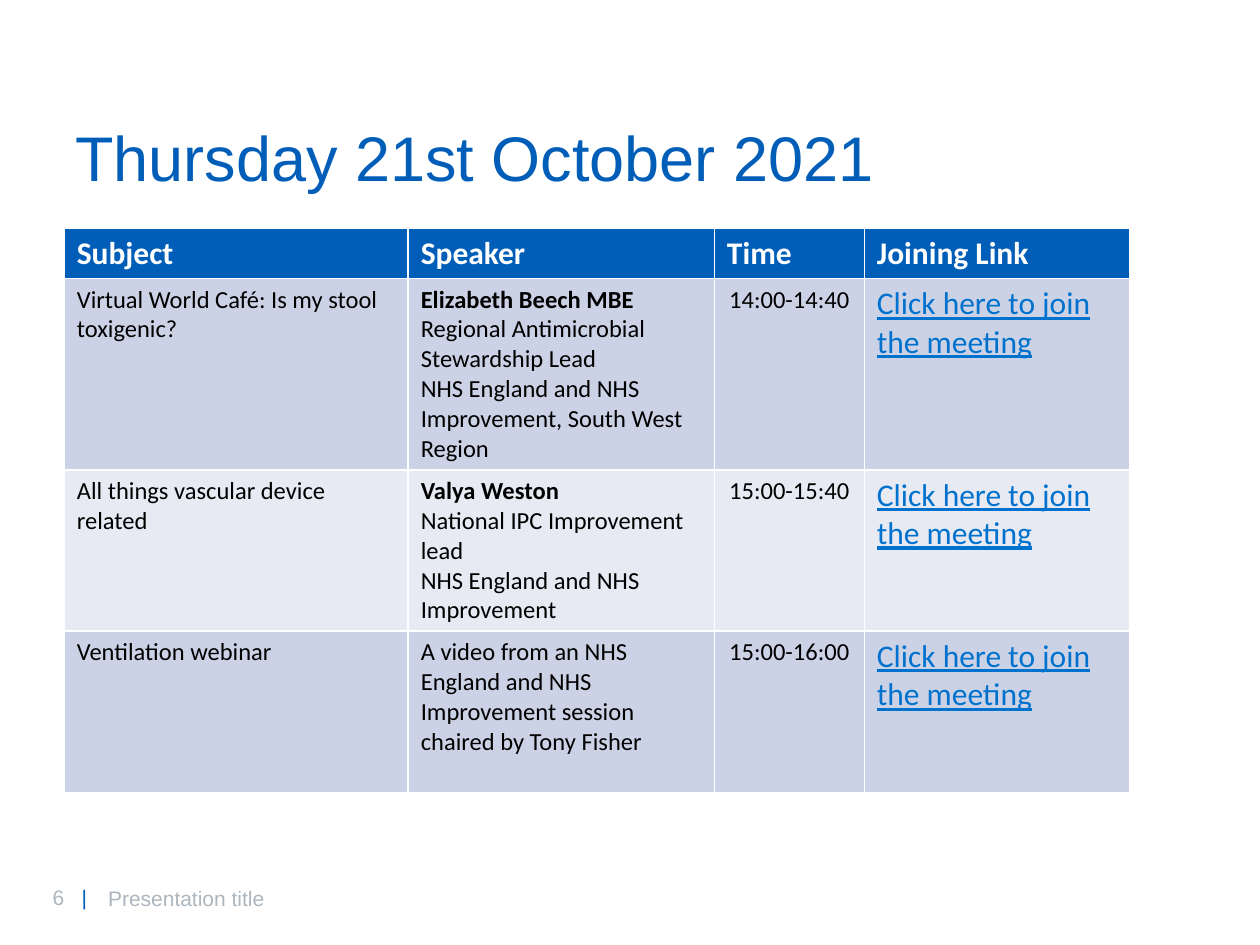
import pptx
import pptx.dml.color
import pptx.enum.text
import pptx.util
import lxml.etree

COLORS = {"blue": "005EB8", "link": "0072CE", "grey": "ADB6BE", "black": "000000",
          "white": "FFFFFF", "dark_band": "CCD2E6", "light_band": "E7EAF3"}
ANCHOR = pptx.enum.text.MSO_ANCHOR

deck = pptx.Presentation()
deck.slide_width = pptx.util.Inches(10)
deck.slide_height = pptx.util.Inches(7.5)
page = deck.slides.add_slide(deck.slide_layouts[6])


def add_span(para, text, size, color, font="Calibri", bold=False, underline=False):
    span = para.add_run()
    span.text = text
    span.font.name = font
    span.font.size = pptx.util.Pt(size)
    span.font.bold = bold
    span.font.underline = underline
    span.font.color.rgb = pptx.dml.color.RGBColor.from_string(COLORS[color])


def add_box(left, top, width, height, anchor):
    box = page.shapes.add_textbox(*(pptx.util.Inches(n) for n in (left, top, width, height)))
    box.text_frame.word_wrap = True
    box.text_frame.vertical_anchor = anchor
    return box.text_frame.paragraphs[0]


number = add_box(0.32, 6.97, 0.71, 0.3, ANCHOR.TOP)
properties = number._p.get_or_add_pPr()
tabs = lxml.etree.SubElement(properties, pptx.oxml.ns.qn("a:tabLst"))
lxml.etree.SubElement(tabs, pptx.oxml.ns.qn("a:tab"),
                      pos=str(pptx.util.Inches(0.23)), algn="l")
add_span(number, "6\t", 12, "grey", "Arial")
add_span(number, "|", 12, "blue", "Arial")

title = add_box(0.5, 0.93, 7.18, 0.67, ANCHOR.BOTTOM)
title.line_spacing = 0.9
add_span(title, "Thursday 21st October 2021", 36, "blue", "Arial")

footer = add_box(0.76, 6.93, 6.26, 0.4, ANCHOR.MIDDLE)
add_span(footer, "Presentation title", 12, "grey", "Arial")

headings = ["Subject", "Speaker", "Time", "Joining Link"]
sessions = [
    ("Virtual World Café: Is my stool toxigenic?", "Elizabeth Beech MBE",
     ["Regional Antimicrobial Stewardship Lead",
      "NHS England and NHS Improvement, South West Region"], "14:00-14:40"),
    ("All things vascular device related", "Valya Weston",
     ["National IPC Improvement lead", "NHS England and NHS Improvement"], "15:00-15:40"),
    ("Ventilation webinar", None,
     ["A video from an NHS England and NHS Improvement session chaired by Tony Fisher"],
     "15:00-16:00"),
]
columns = [2.73, 2.43, 1.19, 2.11]
rows = [0.4, 1.52, 1.28, 1.28]
frame = page.shapes.add_table(len(rows), len(columns), pptx.util.Inches(0.51),
                              pptx.util.Inches(1.81), pptx.util.Inches(sum(columns)),
                              pptx.util.Inches(sum(rows)))
table = frame.table
for column, width in zip(table.columns, columns):
    column.width = pptx.util.Inches(width)
for row, height in zip(table.rows, rows):
    row.height = pptx.util.Inches(height)

for index, row in enumerate(table.rows):
    band = "blue" if index == 0 else "dark_band" if index % 2 else "light_band"
    for cell in row.cells:
        cell.fill.solid()
        cell.fill.fore_color.rgb = pptx.dml.color.RGBColor.from_string(COLORS[band])

for column, heading in enumerate(headings):
    add_span(table.cell(0, column).text_frame.paragraphs[0], heading, 18, "white", bold=True)

for row, (subject, speaker, details, time) in enumerate(sessions, start=1):
    subject_para, speaker_para, time_para, link_para = (
        table.cell(row, column).text_frame.paragraphs[0] for column in range(len(columns)))
    add_span(subject_para, subject, 14, "black")
    lines = [(speaker, True)] if speaker else []
    lines += [(detail, False) for detail in details]
    for position, (line, bold) in enumerate(lines):
        para = table.cell(row, 1).text_frame.add_paragraph() if position else speaker_para
        add_span(para, line, 14, "black", bold=bold)
    time_para.alignment = pptx.enum.text.PP_ALIGN.CENTER
    add_span(time_para, time, 14, "black")
    add_span(link_para, "Click here to join the meeting", 18, "link", underline=True)

deck.save("out.pptx")
